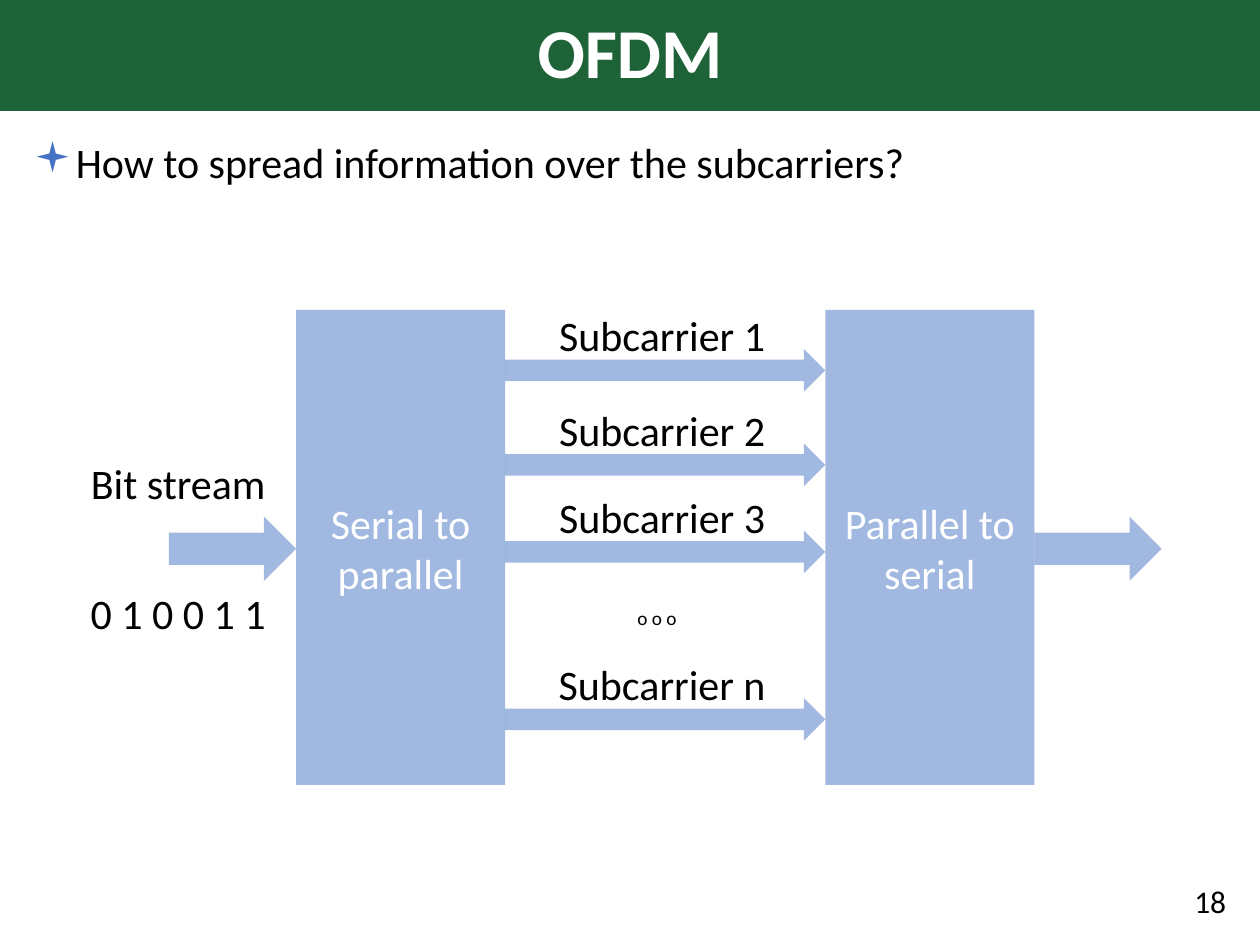
from lxml import etree
from pptx import Presentation
from pptx.dml.color import RGBColor
from pptx.enum.shapes import MSO_SHAPE as SHAPE
from pptx.enum.text import MSO_ANCHOR as ANCHOR, PP_ALIGN as ALIGN
from pptx.oxml.ns import qn
from pptx.util import Inches, Pt

BLUE, GREEN, WHITE, BLACK = "4472C4", "1E6238", "FFFFFF", "000000"
BLOCK_TOP, BLOCK_W, BLOCK_H = 2.46, 1.66, 3.77
SERIAL_X, PARALLEL_X = 2.35, 6.55
LABEL_W, LABEL_H = 1.87, 0.5


def rgb(color):
    return RGBColor.from_string(color)


def box(left, top, width, height):
    return [Inches(v) for v in (left, top, width, height)]


def write(sp, text, size=24, color=BLACK, bold=False, anchor=ANCHOR.TOP, **para):
    """Put one formatted paragraph into a shape and return it."""
    tf = sp.text_frame
    tf.word_wrap, tf.vertical_anchor = True, anchor
    p = tf.paragraphs[0]
    for name, value in ({"alignment": ALIGN.CENTER} | para).items():
        setattr(p, name, value)
    r = p.add_run()
    r.text = text
    for name, value in {"name": "Calibri", "size": Pt(size), "bold": bold}.items():
        setattr(r.font, name, value)
    r.font.color.rgb = rgb(color)
    return p


def add_label(s, text, *place, **fmt):
    return write(s.shapes.add_textbox(*box(*place)), text, **fmt)


def add_shape(s, kind, *place):
    """Add a half-transparent blue shape without outline."""
    sp = s.shapes.add_shape(kind, *box(*place))
    sp.shadow.inherit = False
    sp.fill.solid()
    sp.fill.fore_color.rgb = rgb(BLUE)
    clr = sp.fill._xPr.find(".//" + qn("a:srgbClr"))
    etree.SubElement(clr, qn("a:alpha"), val="50000")
    sp.line.fill.background()
    return sp


def add_block(s, text, left):
    sp = add_shape(s, SHAPE.RECTANGLE, left, BLOCK_TOP, BLOCK_W, BLOCK_H)
    write(sp, text, color=WHITE, anchor=ANCHOR.MIDDLE)


def add_title(s, text):
    sp = s.shapes.title
    sp.left, sp.top, sp.width, sp.height = box(0, 0, 10, 0.88)
    sp.fill.solid()
    sp.fill.fore_color.rgb = rgb(GREEN)
    write(sp, text, 40, WHITE, True, ANCHOR.MIDDLE, line_spacing=0.9)


def add_bullet(s, text, *place):
    p = add_label(s, text, *place, alignment=ALIGN.LEFT, line_spacing=0.9,
                  space_before=Pt(10))
    pPr = p._p.get_or_add_pPr()
    pPr.set("marL", str(Inches(0.25)))
    pPr.set("indent", str(-Inches(0.25)))
    clr = etree.SubElement(pPr, qn("a:buClr"))
    etree.SubElement(clr, qn("a:srgbClr"), val=BLUE)
    etree.SubElement(pPr, qn("a:buFont"), typeface="Wingdings")
    etree.SubElement(pPr, qn("a:buChar"), char="▪")


def main():
    prs = Presentation()
    prs.slide_width, prs.slide_height = Inches(10), Inches(7.5)
    s = prs.slides.add_slide(prs.slide_layouts[5])

    # Heading, question and page number
    add_title(s, "OFDM")
    add_bullet(s, "How to spread information over the subcarriers?",
               0.17, 1.08, 9.65, 6.27)
    add_label(s, "18", 7.58, 6.95, 2.25, 0.4, size=18, anchor=ANCHOR.MIDDLE,
              alignment=ALIGN.RIGHT)

    # Converters with the incoming and outgoing stream
    add_block(s, "Serial to parallel", SERIAL_X)
    add_block(s, "Parallel to serial", PARALLEL_X)
    for left in (SERIAL_X - 1.01, PARALLEL_X + BLOCK_W):
        add_shape(s, SHAPE.RIGHT_ARROW, left, 4.1, 1.01, 0.51)
    for text, top in (("Bit stream", 3.58), ("0 1 0 0 1 1", 4.61)):
        add_label(s, text, 0.48, top, LABEL_W, LABEL_H)

    # Subcarriers: an arrow between the converters with its label above
    start = SERIAL_X + BLOCK_W
    for name, top in (("1", 2.77), ("2", 3.52), ("3", 4.21), ("n", 5.54)):
        add_shape(s, SHAPE.RIGHT_ARROW, start, top, PARALLEL_X - start, 0.34)
        add_label(s, f"Subcarrier {name}", 4.32, top - 0.36, LABEL_W, LABEL_H)
    add_label(s, "o o o", 4.28, 4.76, LABEL_W, 0.29, size=11)

    prs.save("out.pptx")


if __name__ == "__main__":
    main()
